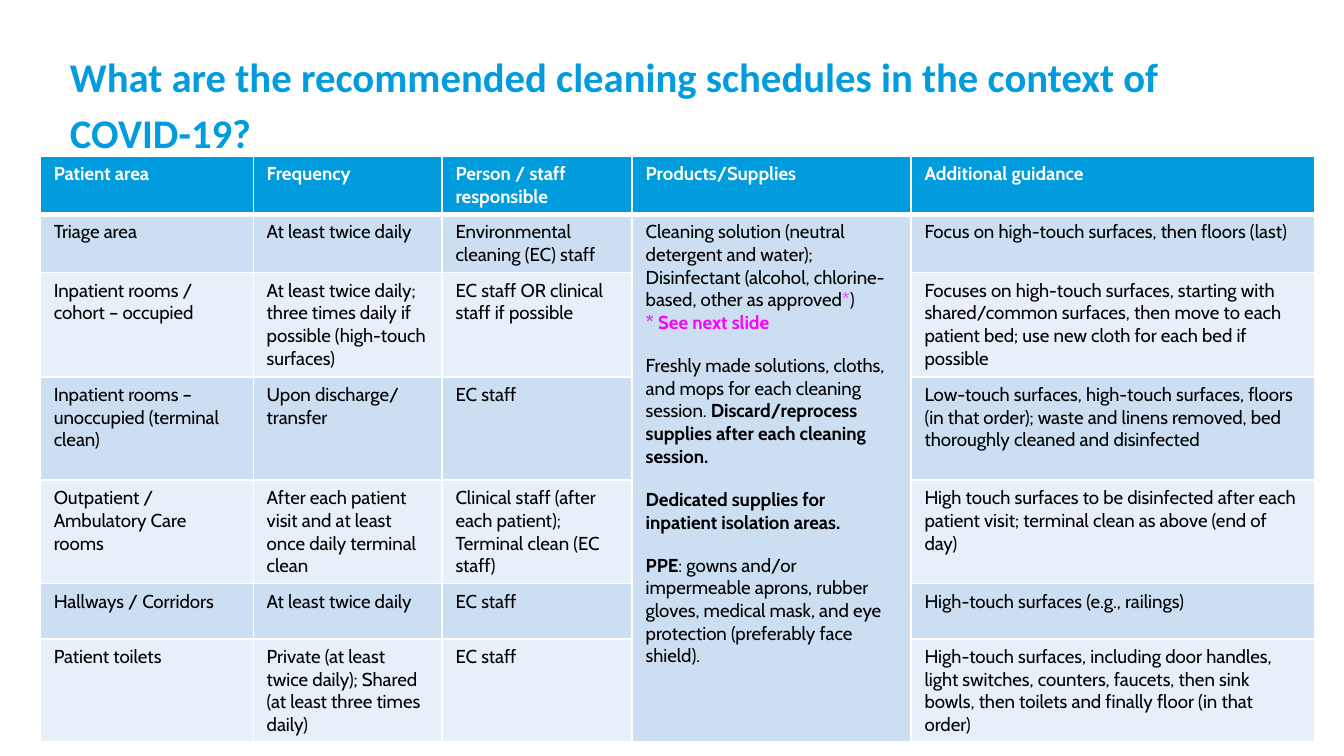
from lxml import etree
from pptx import Presentation
from pptx.dml.color import RGBColor
from pptx.enum.text import MSO_ANCHOR
from pptx.oxml.ns import qn
from pptx.util import Pt

EMU_PER_PX = 4572  # 200 px to the inch
BOTTOM = MSO_ANCHOR.BOTTOM

BLUE, WHITE, BLACK, MAGENTA = "009CDE", "FFFFFF", "000000", "FF00FF"
BANDS = ["CCDEF2", "E7EFF9"]

TITLE = "What are the recommended cleaning schedules in the context of COVID-19?"
HEADERS = ["Patient area", "Frequency", "Person / staff responsible",
           "Products/Supplies", "Additional guidance"]
COLUMN_WIDTHS = [317, 281, 283, 415, 600]
ROW_HEIGHTS = [86, 87, 155, 154, 154, 82, 154]
SUPPLIES_COLUMN = 3
PARAGRAPH_GAP = 11

# Patient area, frequency, staff, guidance
SCHEDULE = [
    ("Triage area", "At least twice daily", "Environmental cleaning (EC) staff",
     "Focus on high-touch surfaces, then floors (last)"),
    ("Inpatient rooms / cohort – occupied",
     "At least twice daily; three times daily if possible (high-touch surfaces)",
     "EC staff OR clinical staff if possible",
     "Focuses on high-touch surfaces, starting with shared/common surfaces, "
     "then move to each patient bed; use new cloth for each bed if possible"),
    ("Inpatient rooms – unoccupied (terminal clean)", "Upon discharge/ transfer", "EC staff",
     "Low-touch surfaces, high-touch surfaces, floors (in that order); "
     "waste and linens removed, bed thoroughly cleaned and disinfected"),
    ("Outpatient / Ambulatory Care rooms",
     "After each patient visit and at least once daily terminal clean",
     "Clinical staff (after each patient); Terminal clean (EC staff)",
     "High touch surfaces to be disinfected after each patient visit; "
     "terminal clean as above (end of day)"),
    ("Hallways / Corridors", "At least twice daily", "EC staff",
     "High-touch surfaces (e.g., railings)"),
    ("Patient toilets", "Private (at least twice daily); Shared (at least three times daily)",
     "EC staff",
     "High-touch surfaces, including door handles, light switches, counters, faucets, "
     "then sink bowls, then toilets and finally floor (in that order)"),
]

# Each paragraph: space before in points, then runs of (text, colour, bold)
SUPPLIES = [
    (0, [("Cleaning solution (neutral detergent and water);", BLACK, False)]),
    (0, [("Disinfectant (alcohol, chlorine-based, other as approved", BLACK, False),
         ("*", MAGENTA, False), (")", BLACK, False)]),
    (0, [("* See next slide", MAGENTA, True)]),
    (PARAGRAPH_GAP, [
        ("Freshly made solutions, cloths, and mops for each cleaning session. ", BLACK, False),
        ("Discard/reprocess supplies after each cleaning session.", BLACK, True)]),
    (PARAGRAPH_GAP, [("Dedicated supplies for inpatient isolation areas.", BLACK, True)]),
    (PARAGRAPH_GAP, [
        ("PPE", BLACK, True),
        (": gowns and/or impermeable aprons, rubber gloves, medical mask, "
         "and eye protection (preferably face shield).", BLACK, False)]),
]


def px(length):
    return length * EMU_PER_PX


def rgb(colour):
    return RGBColor.from_string(colour)


def add_run(paragraph, text, colour, bold, font="Cabin", size=10):
    run = paragraph.add_run()
    run.text = text
    for name, value in {"name": font, "size": Pt(size), "bold": bold}.items():
        setattr(run.font, name, value)
    run.font.color.rgb = rgb(colour)


def style_cell(cell, fill, top=1, bottom=1):
    """Fill a cell and give it white borders, with top and bottom in points."""
    cell.fill.solid()
    cell.fill.fore_color.rgb = rgb(fill)
    properties = cell._tc.get_or_add_tcPr()
    widths = {"a:lnL": 1, "a:lnR": 1, "a:lnT": top, "a:lnB": bottom}
    for index, (tag, width) in enumerate(widths.items()):
        line = etree.Element(qn(tag), w=str(Pt(width)))
        solid = etree.SubElement(line, qn("a:solidFill"))
        etree.SubElement(solid, qn("a:srgbClr"), val=WHITE)
        properties.insert(index, line)


def add_title(slide, left, top, width, height):
    frame = slide.shapes.add_textbox(px(left), px(top), px(width), px(height)).text_frame
    settings = {"word_wrap": True, "vertical_anchor": BOTTOM, "margin_left": px(4),
                "margin_top": 0, "margin_right": px(90), "margin_bottom": 0}
    for name, value in settings.items():
        setattr(frame, name, value)
    paragraph = frame.paragraphs[0]
    paragraph.line_spacing = Pt(30)
    add_run(paragraph, TITLE, BLUE, True, "Calibri", 21.8)


def write_supplies(cell):
    frame = cell.text_frame
    for index, (gap, runs) in enumerate(SUPPLIES):
        paragraph = frame.add_paragraph() if index else frame.paragraphs[0]
        if gap:
            paragraph.space_before = Pt(gap)
        for text, colour, bold in runs:
            add_run(paragraph, text, colour, bold)


def add_schedule(slide, left, top):
    """Add the table; the supplies column is one cell below its header."""
    table = slide.shapes.add_table(
        len(ROW_HEIGHTS), len(COLUMN_WIDTHS), px(left), px(top),
        px(sum(COLUMN_WIDTHS)), px(sum(ROW_HEIGHTS))).table
    for column, width in zip(table.columns, COLUMN_WIDTHS):
        column.width = px(width)
    for row, height in zip(table.rows, ROW_HEIGHTS):
        row.height = px(height)

    for column, text in enumerate(HEADERS):
        cell = table.cell(0, column)
        style_cell(cell, BLUE, bottom=3)
        add_run(cell.text_frame.paragraphs[0], text, WHITE, True)

    text_columns = [c for c in range(len(HEADERS)) if c != SUPPLIES_COLUMN]
    for row, texts in enumerate(SCHEDULE, start=1):
        fill = BANDS[(row - 1) % 2]
        top_border = 3 if row == 1 else 1
        style_cell(table.cell(row, SUPPLIES_COLUMN), BANDS[0], top_border)
        for column, text in zip(text_columns, texts):
            cell = table.cell(row, column)
            style_cell(cell, fill, top_border)
            add_run(cell.text_frame.paragraphs[0], text, BLACK, False)

    supplies = table.cell(1, SUPPLIES_COLUMN)
    supplies.merge(table.cell(len(SCHEDULE), SUPPLIES_COLUMN))
    write_supplies(supplies)


def main():
    presentation = Presentation()
    presentation.slide_width, presentation.slide_height = px(2000), px(1125)
    slide = presentation.slides.add_slide(presentation.slide_layouts[6])
    add_title(slide, 100, 45, 1800, 188)
    add_schedule(slide, 60, 232)
    presentation.save("out.pptx")


if __name__ == "__main__":
    main()
